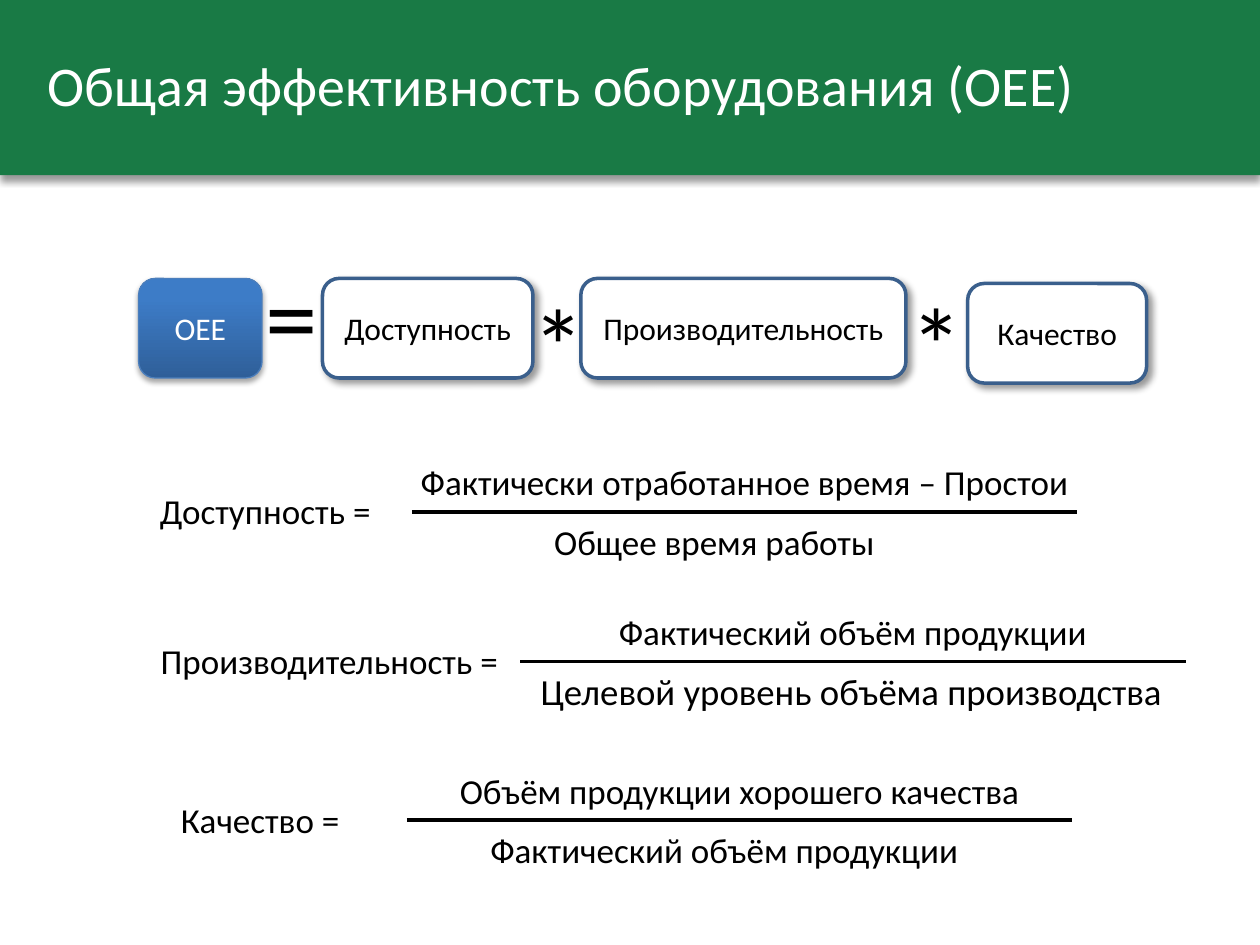
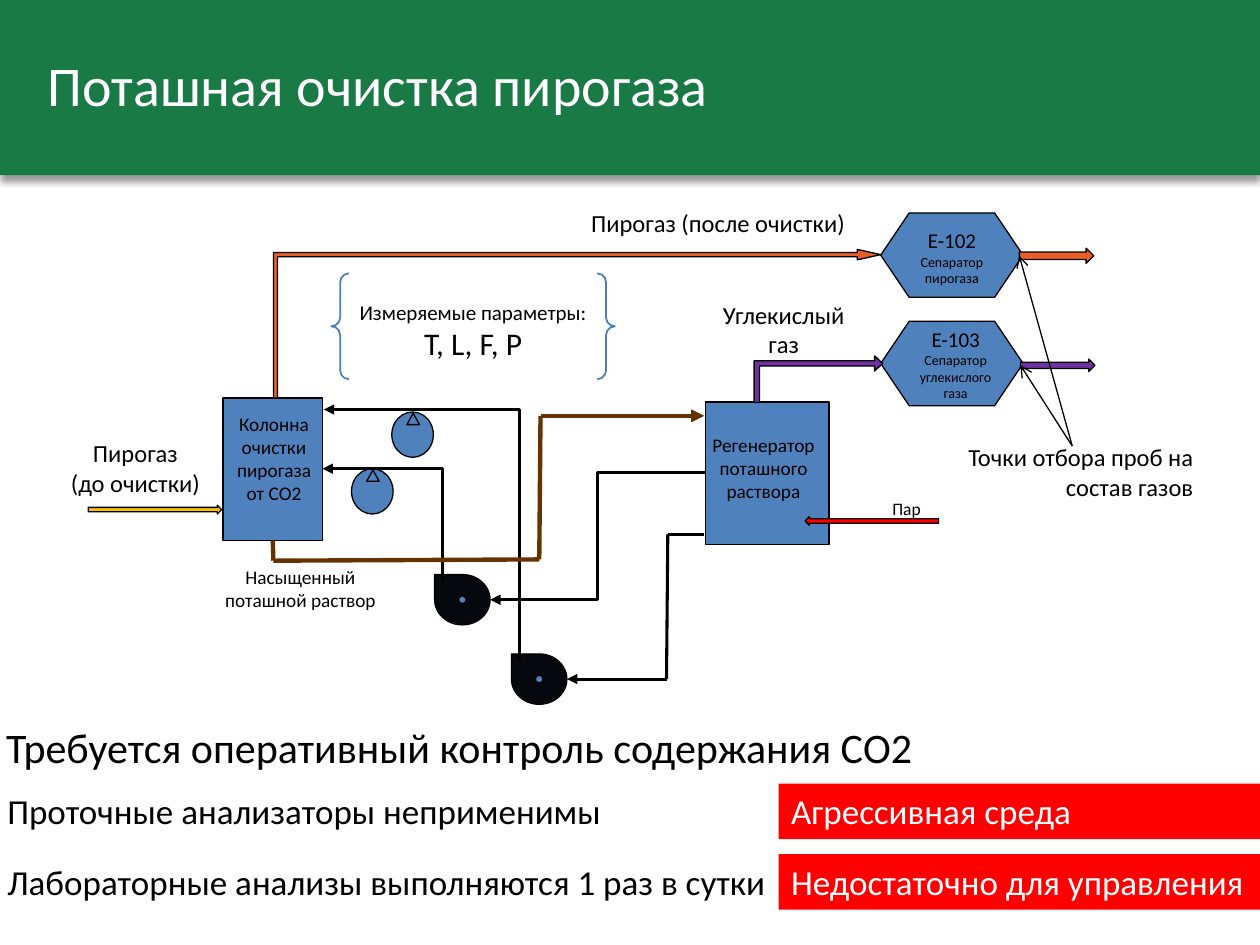
from lxml.etree import SubElement as Sub
from pptx import Presentation
from pptx.dml.color import RGBColor as Rgb
from pptx.enum.shapes import MSO_CONNECTOR as Con, MSO_SHAPE as Geo
from pptx.enum.text import MSO_ANCHOR as Anchor, PP_ALIGN as Align
from pptx.oxml.ns import qn
from pptx.util import Inches, Pt

FONT = "Calibri"
HEX = {
    "band": "197A45", "white": "FFFFFF", "black": "000000", "frame": "3A5F8C",
    "edge": "4B7EBC", "deep": "2F5F99", "light": "3D7CC7", "steel": "4F81BD",
    "pump": "05080D", "gold": "FFC000", "orange": "E95E27", "violet": "7030A0",
    "brown": "663300", "red": "FF0000",
}


def rgb(name):
    return Rgb.from_string(HEX[name])


def write(shape, lines, size, color="black", align=Align.CENTER,
          anchor=Anchor.TOP, wrap=True):
    """Fill a shape with lines; a line may be a (text, size) pair."""
    frame = shape.text_frame
    frame.word_wrap = wrap
    frame.vertical_anchor = anchor
    for i, line in enumerate(lines):
        text, pts = line if isinstance(line, tuple) else (line, size)
        para = frame.paragraphs[0] if i == 0 else frame.add_paragraph()
        para.alignment = align
        run = para.add_run()
        run.text = text
        run.font.name = FONT
        run.font.size = Pt(pts)
        run.font.color.rgb = rgb(color)


def label(slide, at, lines, size, **style):
    box = slide.shapes.add_textbox(*map(Inches, at))
    write(box, lines, size, **style)


def shade(shape, alpha, blur, dist, angle):
    effects = shape._element.spPr.find(qn("a:effectLst"))
    outer = Sub(effects, qn("a:outerShdw"), blurRad=str(Pt(blur)), dist=str(Pt(dist)),
                dir=str(angle * 60000), algn="t", rotWithShape="0")
    color = Sub(outer, qn("a:srgbClr"), val=HEX["black"])
    Sub(color, qn("a:alpha"), val=str(alpha * 1000))


def draw(slide, geo, at, fill=None, line="black", width=0.75, adj=(),
         turn=0, flip=None):
    shape = slide.shapes.add_shape(geo, *map(Inches, at))
    shape.shadow.inherit = False
    if fill:
        shape.fill.solid()
        shape.fill.fore_color.rgb = rgb(fill)
    else:
        shape.fill.background()
    if line:
        shape.line.color.rgb = rgb(line)
        shape.line.width = Pt(width)
    else:
        shape.line.fill.background()
    for i, value in enumerate(adj):
        shape.adjustments[i] = value
    shape.rotation = turn
    if flip:
        shape._element.spPr.find(qn("a:xfrm")).set(flip, "1")
    return shape


def link(slide, start, end, color="black", width=1.75, head=None, tail=None,
         bend=None):
    """Draw a line, or an elbow whose turn lies at the share given by bend."""
    kind = Con.STRAIGHT if bend is None else Con.ELBOW
    line = slide.shapes.add_connector(kind, *map(Inches, start + end))
    line.line.color.rgb = rgb(color)
    line.line.width = Pt(width)
    props = line._element.spPr
    for tag, arrow in (("a:headEnd", head), ("a:tailEnd", tail)):
        if arrow:
            Sub(props.find(qn("a:ln")), qn(tag), type=arrow)
    if bend is not None:
        geom = props.find(qn("a:prstGeom"))
        guides = geom.find(qn("a:avLst"))
        if guides is None:
            guides = Sub(geom, qn("a:avLst"))
        Sub(guides, qn("a:gd"), name="adj1", fmla=f"val {int(bend * 100000)}")
    Sub(props, qn("a:effectLst"))
    return line


def page(deck, title):
    slide = deck.slides.add_slide(deck.slide_layouts[6])
    band = draw(slide, Geo.RECTANGLE, (0, 0, 10, 1.39), "band", None)
    shade(band, 40, 4, 3, 90)
    label(slide, (0.28, 0.2, 9.45, 0.94), [title], 32, color="white",
          align=Align.LEFT, anchor=Anchor.MIDDLE)
    return slide


# Slide 1: the OEE formula
def factor(slide, x, y, w, text):
    card = draw(slide, Geo.ROUNDED_RECTANGLE, (x, y, w, 0.79), "white", "frame", 2)
    shade(card, 40, 4, 3, 45)
    write(card, [text], 18, anchor=Anchor.MIDDLE)


def term(slide, at, text, size=20, fill=None, align=Align.CENTER):
    box = draw(slide, Geo.ROUNDED_RECTANGLE, at, fill, None)
    write(box, [text], size, align=align, anchor=Anchor.MIDDLE)
    return box


def ratio(slide, name, at, bar, top, base, low, size=20, indent=0):
    """Name on the left, then a fraction over a bar; low is the base's box."""
    x, y, w = at
    mid = y + 0.4
    term(slide, (x, y, w, 0.79), name, fill="white")
    term(slide, (bar - 0.55, mid - 0.47, 6.38, 0.47), top)
    link(slide, (bar, mid), (bar + 5.28, mid), width=2.25)
    align = Align.LEFT if indent else Align.CENTER
    box = term(slide, (low[0], mid, low[1], 0.47), base, size, align=align)
    if indent:
        props = box.text_frame.paragraphs[0]._p.get_or_add_pPr()
        props.set("marL", str(Inches(indent)))


def formula(deck):
    slide = page(deck, "Общая эффективность оборудования (OEE)")
    total = draw(slide, Geo.ROUNDED_RECTANGLE, (1.1, 2.21, 0.98, 0.79), "light", "edge")
    total.fill.gradient()
    total.fill.gradient_angle = 90
    stops = total.fill.gradient_stops
    for stop, color, place in zip(stops, ("deep", "light"), (0, 0.8)):
        stop.color.rgb = rgb(color)
        stop.position = place
    shade(total, 35, 3.1, 1.8, 90)
    write(total, ["OEE"], 18, "white", anchor=Anchor.MIDDLE)

    factor(slide, 2.56, 2.21, 1.67, "Доступность")
    factor(slide, 7.68, 2.25, 1.42, "Качество")
    factor(slide, 4.61, 2.21, 2.58, "Производительность")
    for x, y, w, sign in ((2.01, 1.94, 0.62, "="), (4.13, 2.17, 0.55, "*"),
                          (7.13, 2.16, 0.55, "*")):
        label(slide, (x, y, w, 1.11), [sign], 60, align=Align.LEFT)

    ratio(slide, "Доступность =", (1.1, 3.66, 2.01), 3.27,
          "Фактически отработанное время – Простои", "Общее время работы", (3.03, 5.28))
    ratio(slide, "Производительность =", (1.1, 4.85, 3.03), 4.13,
          "Фактический объём продукции", "Целевой уровень объёма производства",
          (3.23, 6.34), 21, 0.94)
    ratio(slide, "Качество =", (1.06, 6.11, 2.01), 3.23,
          "Объём продукции хорошего качества", "Фактический объём продукции", (3.11, 5.28))


# Slide 2: the gas cleaning scheme
def pump(slide, x, y):
    draw(slide, Geo.TEAR, (x, y, 0.44, 0.4), "pump", flip="flipH")
    draw(slide, Geo.OVAL, (x + 0.19, y + 0.17, 0.06, 0.06), "steel")


def gauge(slide, x, y):
    draw(slide, Geo.OVAL, (x, y, 0.33, 0.36), "steel")
    draw(slide, Geo.ISOSCELES_TRIANGLE, (x + 0.12, y + 0.01, 0.1, 0.09), "steel")


def drum(slide, y, at, lines):
    draw(slide, Geo.FLOWCHART_PREPARATION, (6.99, y, 1.13, 0.67), "steel")
    label(slide, at, lines, 8)


def tank(slide, at, text_at, lines):
    shape = draw(slide, Geo.RECTANGLE, at, "steel")
    label(slide, text_at, lines, 11, wrap=False)
    return shape


def note(slide, y, text, verdict):
    label(slide, (-0.04, y, 6.52, 0.44), [text], 20, align=Align.JUSTIFY)
    bar = draw(slide, Geo.RECTANGLE, (6.18, y, 3.88, 0.44), "red", None)
    write(bar, [verdict], 20, "white", Align.JUSTIFY)


def scheme(deck):
    slide = page(deck, "Поташная очистка пирогаза")

    # Units
    pump(slide, 3.45, 4.56)
    pump(slide, 4.06, 5.19)
    drum(slide, 1.69, (7.11, 1.76, 0.89, 0.57), [("E-102", 12), "Сепаратор пирогаза"])
    drum(slide, 2.55, (6.97, 2.54, 1.23, 0.71),
         [("E-103", 12), "Сепаратор углекислого", "газа"])
    column = tank(slide, (1.77, 3.16, 0.79, 1.13), (1.78, 3.22, 0.79, 0.84),
                  ["Колонна", "очистки", "пирогаза", "от СО2"])
    tank(slide, (5.6, 3.19, 0.98, 1.13), (5.55, 3.39, 1.02, 0.84),
         ["Регенератор", "поташного", "раствора"])

    # Gas and steam flows
    for at, fill, flip in (
        ((0.7, 4.01, 1.06, 0.07), "gold", None),
        ((8.09, 1.97, 0.59, 0.12), "orange", None),
        ((8.1, 2.85, 0.59, 0.1), "violet", None),
        ((6.39, 4.1, 1.06, 0.07), "red", "flipH"),
    ):
        draw(slide, Geo.RIGHT_ARROW, at, fill, flip=flip)
    for at, fill, adj in (
        ((3.99, 0.16, 1.18, 4.82), "orange", (0.028, 0.035, 0.158)),
        ((6.31, 2.5, 0.37, 1.02), "violet", (0.113, 0.162, 0.173)),
    ):
        draw(slide, Geo.BENT_UP_ARROW, at, fill, adj=adj, turn=270, flip="flipV")

    # Potash solution flows
    gauge(slide, 2.79, 3.72)
    gauge(slide, 3.11, 3.27)
    link(slide, (5.6, 3.75), (3.89, 4.76), tail="triangle", bend=0.5)
    link(slide, (2.56, 3.72), (3.51, 4.62), head="triangle", bend=1)
    link(slide, (2.57, 3.25), (4.12, 5.24), head="triangle", bend=1)
    link(slide, (4.5, 5.39), (5.29, 5.39), head="triangle")
    link(slide, (5.3, 4.24), (5.59, 4.24))
    link(slide, (5.29, 5.39), (5.3, 4.24))
    rich = {"color": "brown", "width": 2.5}
    link(slide, (2.17, 4.29), (2.17, 4.45), **rich).begin_connect(column, 2)
    link(slide, (4.28, 4.44), (2.17, 4.45), **rich)
    link(slide, (4.29, 3.3), (4.28, 4.44), **rich)
    link(slide, (5.59, 3.3), (4.29, 3.3), head="triangle", **rich)

    # Sample points
    for end in ((8.1, 2.9), (8.09, 2.03)):
        link(slide, (8.51, 3.54), end, width=0.75, tail="arrow")

    # Labels
    for at, lines, size in (
        ((4.42, 1.6, 2.56, 0.34), ["Пирогаз (после очистки)"], 14),
        ((5.61, 2.33, 1.22, 0.57), ["Углекислый газ"], 14),
        ((1.55, 4.44, 1.67, 0.47), ["Насыщенный", "поташной раствор"], 11),
        ((6.87, 3.9, 0.65, 0.27), ["Пар"], 10),
        ((0.35, 3.43, 1.45, 0.57), ["Пирогаз", "(до очистки)"], 14),
    ):
        label(slide, at, lines, size)
    label(slide, (7.42, 3.46, 2.15, 0.57), ["Точки отбора проб на состав газов"], 14,
          align=Align.RIGHT)
    brace = draw(slide, Geo.DOUBLE_BRACE, (2.63, 2.17, 2.25, 0.84), line="edge", width=1)
    write(brace, ["Измеряемые параметры:", ("T, L, F, P", 18)], 12, anchor=Anchor.MIDDLE)

    # Conclusions
    label(slide, (-0.05, 5.68, 10.05, 0.5),
          ["Требуется оперативный контроль содержания СО2"], 24, align=Align.JUSTIFY)
    note(slide, 6.22, "Проточные анализаторы неприменимы", "Агрессивная среда")
    note(slide, 6.78, "Лабораторные анализы выполняются 1 раз в сутки",
         "Недостаточно для управления")


def main():
    deck = Presentation()
    deck.slide_width, deck.slide_height = Inches(10), Inches(7.5)
    formula(deck)
    scheme(deck)
    deck.save("out.pptx")


if __name__ == "__main__":
    main()
